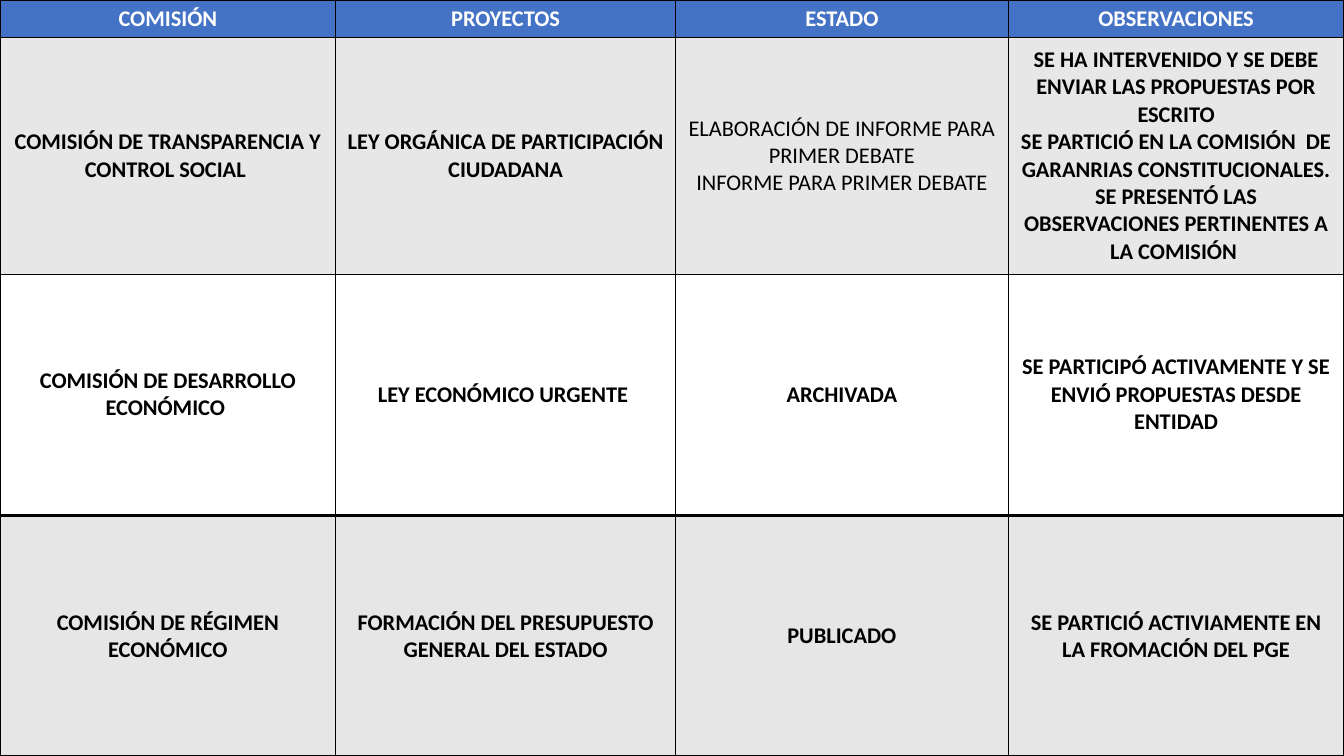
import dataclasses

import lxml.etree
import pptx
import pptx.dml.color
import pptx.enum.text
import pptx.oxml.ns
import pptx.util

COLORS = {
    "header": "4472C4",
    "gray": "E7E7E7",
    "warm_gray": "E7E6E6",
    "white": "FFFFFF",
    "black": "000000",
}
COLUMN_WIDTHS = [3.33, 3.37, 3.3, 3.33]
BORDER_SIDES = ["a:lnL", "a:lnR", "a:lnT", "a:lnB"]


@dataclasses.dataclass
class Row:
    texts: list[str]
    height: float
    fill: str
    color: str = "black"
    regular_columns: tuple[int, ...] = ()


@dataclasses.dataclass
class CommissionTable:
    top: float
    rows: list[Row]


TABLES = [
    CommissionTable(0, [
        Row(["COMISIÓN", "PROYECTOS", "ESTADO", "OBSERVACIONES"], 0.37, "header", "white"),
        Row([
            "COMISIÓN DE TRANSPARENCIA Y CONTROL SOCIAL ",
            "LEY ORGÁNICA DE PARTICIPACIÓN CIUDADANA",
            "ELABORACIÓN DE INFORME PARA PRIMER DEBATE\nINFORME PARA PRIMER DEBATE",
            "SE HA INTERVENIDO Y SE DEBE ENVIAR LAS PROPUESTAS POR ESCRITO\n"
            "SE PARTICIÓ EN LA COMISIÓN  DE GARANRIAS CONSTITUCIONALES. "
            "SE PRESENTÓ LAS OBSERVACIONES PERTINENTES A LA COMISIÓN ",
        ], 2.35, "gray", regular_columns=(2,)),
    ]),
    CommissionTable(2.72, [
        Row([
            "COMISIÓN DE DESARROLLO ECONÓMICO ",
            "LEY ECONÓMICO URGENTE ",
            "ARCHIVADA",
            "SE PARTICIPÓ ACTIVAMENTE Y SE ENVIÓ PROPUESTAS DESDE ENTIDAD",
        ], 2.39, "white"),
    ]),
    CommissionTable(5.12, [
        Row([
            "COMISIÓN DE RÉGIMEN ECONÓMICO",
            "FORMACIÓN DEL PRESUPUESTO GENERAL DEL ESTADO",
            "PUBLICADO",
            "SE PARTICIÓ ACTIVIAMENTE EN LA FROMACIÓN DEL PGE",
        ], 2.38, "warm_gray"),
    ]),
]


def rgb(name: str) -> pptx.dml.color.RGBColor:
    return pptx.dml.color.RGBColor.from_string(COLORS[name])


def write_text(text_frame, text: str, *, size: float = 16, color: str = "black",
               bold: bool = True, font: str = "Calibri") -> None:
    text_frame.text = text
    for paragraph in text_frame.paragraphs:
        paragraph.alignment = pptx.enum.text.PP_ALIGN.CENTER
        for run in paragraph.runs:
            run.font.name = font
            run.font.size = pptx.util.Pt(size)
            run.font.bold = bold
            run.font.color.rgb = rgb(color)


def add_borders(cell, color: str = "black", width: float = 1) -> None:
    properties = cell._tc.get_or_add_tcPr()
    for position, side in enumerate(BORDER_SIDES):
        line = lxml.etree.Element(pptx.oxml.ns.qn(side), w=str(pptx.util.Pt(width)))
        fill = lxml.etree.SubElement(line, pptx.oxml.ns.qn("a:solidFill"))
        lxml.etree.SubElement(fill, pptx.oxml.ns.qn("a:srgbClr"), val=COLORS[color])
        properties.insert(position, line)


def format_cell(cell, row: Row, column: int) -> None:
    cell.vertical_anchor = pptx.enum.text.MSO_ANCHOR.MIDDLE
    cell.margin_top = cell.margin_bottom = pptx.util.Inches(0.04)
    cell.fill.solid()
    cell.fill.fore_color.rgb = rgb(row.fill)
    write_text(cell.text_frame, row.texts[column], color=row.color,
               bold=column not in row.regular_columns)
    add_borders(cell)


def add_commission_table(slide, content: CommissionTable) -> None:
    height = sum(row.height for row in content.rows)
    table = slide.shapes.add_table(
        len(content.rows), len(COLUMN_WIDTHS),
        pptx.util.Inches(0), pptx.util.Inches(content.top),
        pptx.util.Inches(sum(COLUMN_WIDTHS)), pptx.util.Inches(height),
    ).table
    table.first_row = False
    table.horz_banding = False
    for column, width in zip(table.columns, COLUMN_WIDTHS):
        column.width = pptx.util.Inches(width)
    for table_row, row in zip(table.rows, content.rows):
        table_row.height = pptx.util.Inches(row.height)
        for column, cell in enumerate(table_row.cells):
            format_cell(cell, row, column)


def main() -> None:
    presentation = pptx.Presentation()
    presentation.slide_width = pptx.util.Inches(13.33)
    presentation.slide_height = pptx.util.Inches(7.5)
    slide = presentation.slides.add_slide(presentation.slide_layouts[6])
    for content in TABLES:
        add_commission_table(slide, content)
    presentation.save("out.pptx")


if __name__ == "__main__":
    main()
